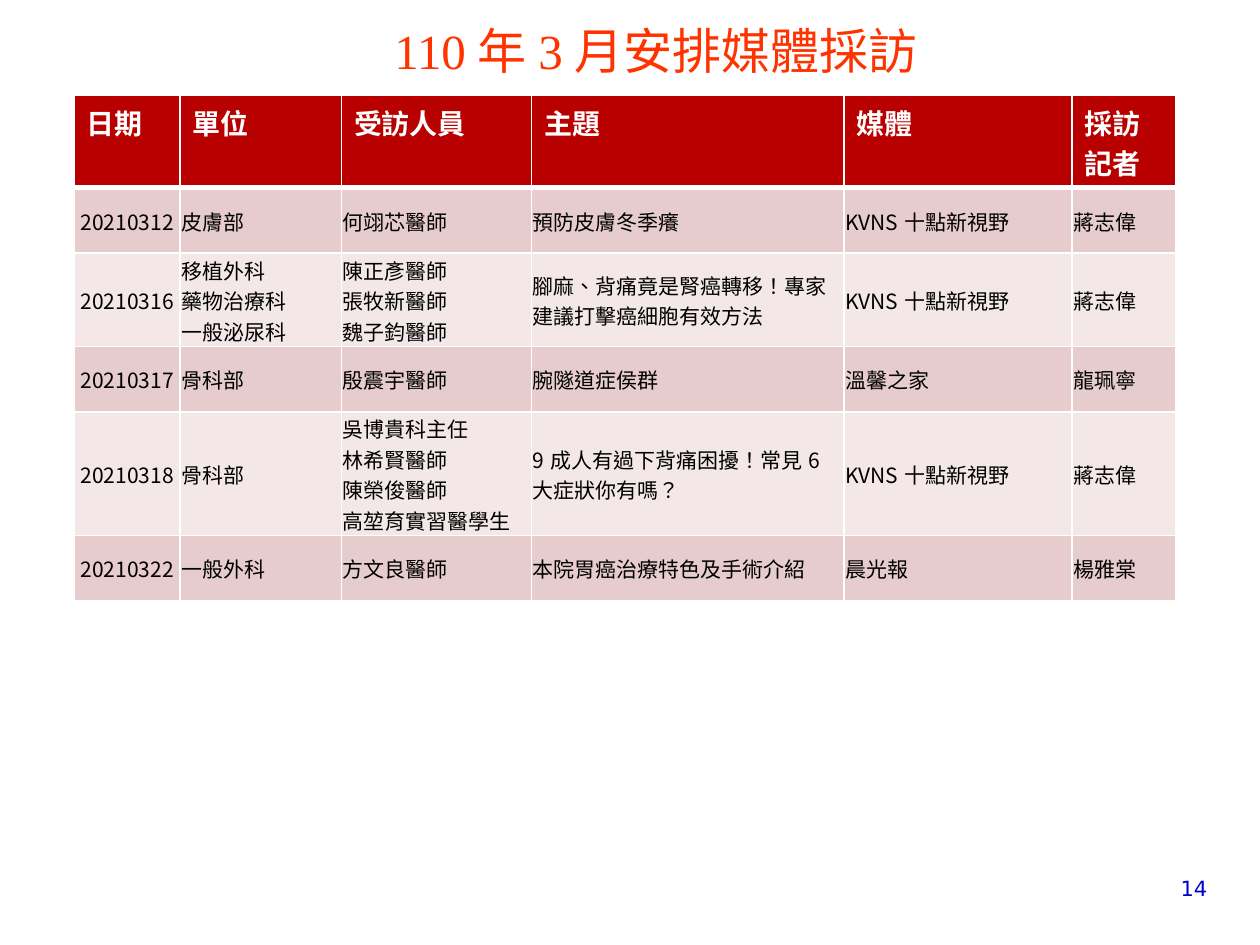
from lxml import etree
from pptx import Presentation
from pptx.dml.color import RGBColor
from pptx.enum.lang import MSO_LANGUAGE_ID
from pptx.enum.text import MSO_ANCHOR, PP_ALIGN
from pptx.oxml.ns import qn
from pptx.util import Inches, Pt

LEFT, CENTER, RIGHT = PP_ALIGN.LEFT, PP_ALIGN.CENTER, PP_ALIGN.RIGHT
TOP, MIDDLE, BOTTOM = MSO_ANCHOR.TOP, MSO_ANCHOR.MIDDLE, MSO_ANCHOR.BOTTOM
CHINESE = MSO_LANGUAGE_ID.TRADITIONAL_CHINESE
COLORS = {"title": "FF3300", "number": "0000CC", "header": "B90000", "white": "FFFFFF",
          "text": "000000", "odd": "E6CCCC", "even": "F3E7E7"}
SANS_TC, SANS_SC = "Noto Sans CJK TC", "Noto Sans CJK SC"


def format_text(text_frame, size, color, latin, east_asian, align, bold=False):
    for paragraph in text_frame.paragraphs:
        paragraph.alignment = align
        for run in paragraph.runs:
            run.font.size = Pt(size)
            run.font.bold = bold
            run.font.language_id = CHINESE
            run.font.color.rgb = RGBColor.from_string(COLORS[color])
            run.font.name = latin
            etree.SubElement(run.font._element, qn("a:ea"), typeface=east_asian)


def set_borders(cell, widths):
    """Draw white borders; widths maps the side letter L, R, T or B to points."""
    properties = cell._tc.get_or_add_tcPr()
    for side, width in widths.items():
        line = etree.SubElement(properties, qn(f"a:ln{side}"), w=str(Pt(width)))
        fill = etree.SubElement(line, qn("a:solidFill"))
        etree.SubElement(fill, qn("a:srgbClr"), val=COLORS["white"])


presentation = Presentation()
presentation.slide_width, presentation.slide_height = Inches(10), Inches(7.5)
slide = presentation.slides.add_slide(presentation.slide_layouts[5])

title = slide.shapes.title
title.left, title.top, title.width, title.height = (
    Inches(0.83), Inches(0.36), Inches(8.75), Inches(0.32))
title.text_frame.text = "110年3月安排媒體採訪"
title.text_frame.vertical_anchor = BOTTOM
format_text(title.text_frame, 28, "title", "Times New Roman", SANS_TC, CENTER)

number = slide.shapes.add_textbox(Inches(8.94), Inches(6.9), Inches(0.74), Inches(0.3))
number.text_frame.word_wrap = True
number.text_frame.text = "14"
format_text(number.text_frame, 12, "number", "DejaVu Sans", "DejaVu Sans", RIGHT)

# A vertical tab is a line break inside a paragraph
rows = [
    ["日期", "單位", "受訪人員", "主題", "媒體", "採訪記者"],
    ["20210312", "皮膚部", "何翊芯醫師", "預防皮膚冬季癢", "KVNS十點新視野", "蔣志偉"],
    ["20210316", "移植外科\v藥物治療科\v一般泌尿科", "陳正彥醫師\v張牧新醫師\v魏子鈞醫師",
     "腳麻、背痛竟是腎癌轉移！專家建議打擊癌細胞有效方法", "KVNS十點新視野", "蔣志偉"],
    ["20210317", "骨科部", "殷震宇醫師", "腕隧道症侯群", "溫馨之家", "龍珮寧"],
    ["20210318", "骨科部", "吳博貴科主任\v林希賢醫師\v陳榮俊醫師\v高堃育實習醫學生",
     "9成人有過下背痛困擾！常見6大症狀你有嗎？", "KVNS十點新視野", "蔣志偉"],
    ["20210322", "一般外科", "方文良醫師", "本院胃癌治療特色及手術介紹", "晨光報", "楊雅棠"],
]
column_widths = [0.84, 1.28, 1.51, 2.48, 1.81, 0.82]
row_heights = [0.73, 0.52, 0.74, 0.52, 0.98, 0.52]

table = slide.shapes.add_table(len(rows), len(column_widths), Inches(0.59), Inches(0.76),
                               Inches(sum(column_widths)), Inches(sum(row_heights))).table
for column, width in zip(table.columns, column_widths):
    column.width = Inches(width)
for row, height in zip(table.rows, row_heights):
    row.height = Inches(height)

for row_index, texts in enumerate(rows):
    for column_index, text in enumerate(texts):
        cell = table.cell(row_index, column_index)
        cell.text_frame.text = text
        is_header = row_index == 0
        set_borders(cell, {"L": 1, "R": 1, "T": 3 if row_index == 1 else 1,
                           "B": 3 if is_header else 1})
        if is_header:
            fill = "header"
            cell.vertical_anchor = TOP
            format_text(cell.text_frame, 16, "white", SANS_SC, SANS_SC, LEFT, bold=True)
        else:
            fill = "odd" if row_index % 2 else "even"
            cell.vertical_anchor = MIDDLE
            cell.margin_left = cell.margin_right = cell.margin_top = Inches(0.01)
            cell.margin_bottom = 0
            align = CENTER if column_index == 0 else LEFT
            format_text(cell.text_frame, 12, "text", SANS_TC, SANS_TC, align)
        cell.fill.solid()
        cell.fill.fore_color.rgb = RGBColor.from_string(COLORS[fill])

presentation.save("out.pptx")
